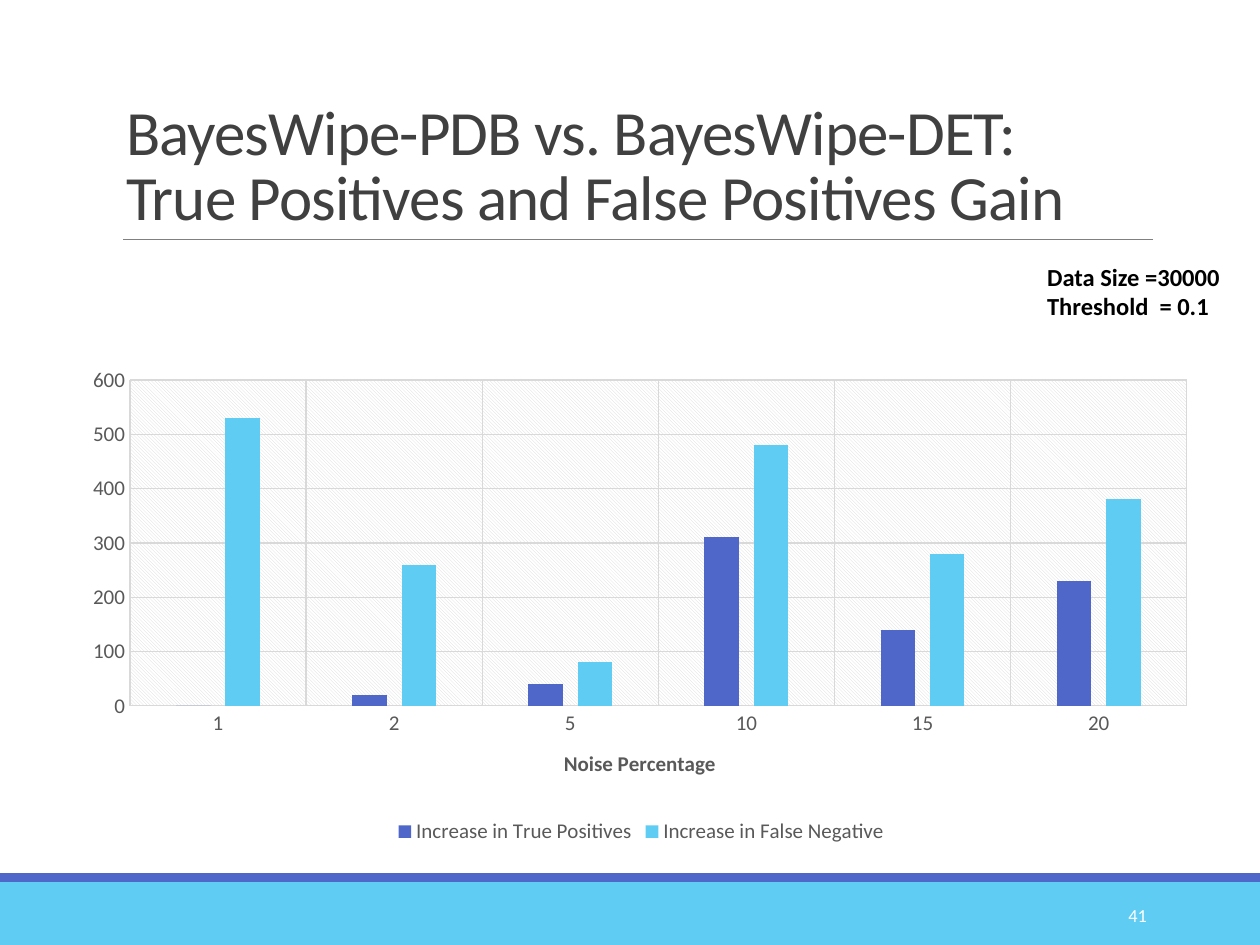
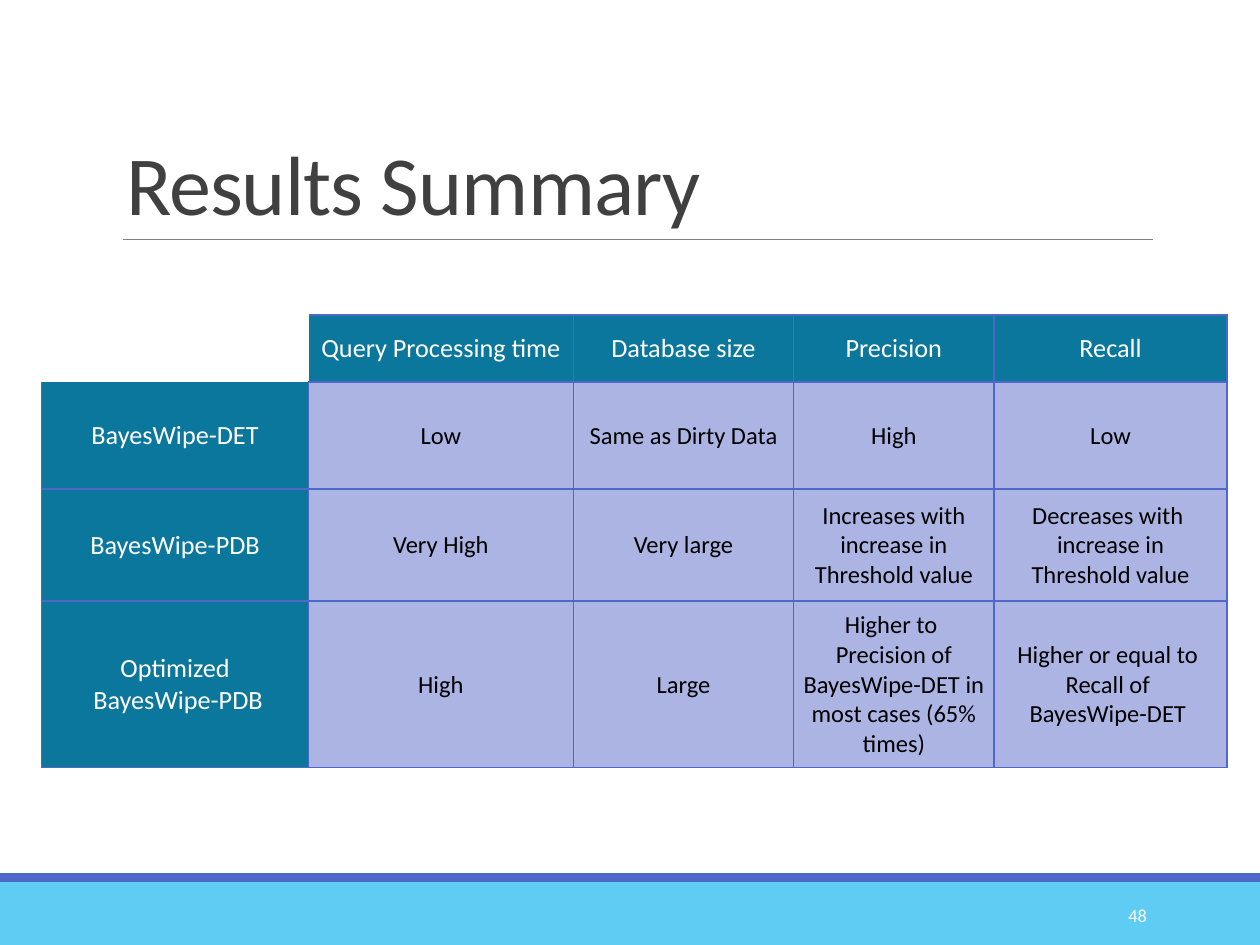
from lxml import etree
from pptx import Presentation
from pptx import util as u
from pptx.chart.data import CategoryChartData
from pptx.dml.color import RGBColor
from pptx.enum import chart as ch, shapes, text
from pptx.oxml import parse_xml
from pptx.oxml.ns import nsdecls, qn

Inches, Pt = u.Inches, u.Pt

FONT = "Calibri"
BLUE = RGBColor(0x4E, 0x67, 0xC8)
SKY = RGBColor(0x5E, 0xCC, 0xF3)
TEAL = RGBColor(0x0C, 0x77, 0x9D)
LAVENDER = RGBColor(0xAC, 0xB4, 0xE4)
WHITE = RGBColor(0xFF, 0xFF, 0xFF)
BLACK = RGBColor(0, 0, 0)
TITLE_GREY = RGBColor(0x40, 0x40, 0x40)
LABEL_GREY = RGBColor(0x59, 0x59, 0x59)
GRID_GREY = RGBColor(0xD9, 0xD9, 0xD9)
RULE_GREY = RGBColor(0x80, 0x80, 0x80)

LEFT, CENTER, RIGHT = text.PP_ALIGN.LEFT, text.PP_ALIGN.CENTER, text.PP_ALIGN.RIGHT
MIDDLE, BOTTOM = text.MSO_ANCHOR.MIDDLE, text.MSO_ANCHOR.BOTTOM
NO_STYLE = "{2D5ABB26-0587-4C30-8999-92F81FD0307C}"


def apply(obj, **values):
    for name, value in values.items():
        setattr(obj, name, value)


def box(*lengths):
    return [Inches(v) for v in lengths]


def style_font(font, size, color, bold=False):
    apply(font, name=FONT, size=Pt(size), bold=bold)
    font.color.rgb = color


def style_line(line, color, width):
    line.color.rgb = color
    line.width = Pt(width)


class Deck:
    def __init__(self):
        self.prs = Presentation()
        apply(self.prs, slide_width=Inches(10), slide_height=Inches(7.5))
        self.s = None

    def slide(self, title, size, number):
        self.s = self.prs.slides.add_slide(self.prs.slide_layouts[5])
        self.band(7, 0.5, SKY)
        self.band(6.93, 0.07, BLUE)
        self.rule(0.98, 9.15, 1.9)
        self.title(title, size)
        self.text(number, (8.12, 7.06, 1.08, 0.4), 10.5, WHITE,
                  align=RIGHT, vertical_anchor=MIDDLE)

    def band(self, top, height, color):
        sp = self.s.shapes.add_shape(shapes.MSO_SHAPE.RECTANGLE, *box(0, top, 10, height))
        sp.shadow.inherit = False
        sp.fill.solid()
        sp.fill.fore_color.rgb = color
        sp.line.fill.background()

    def rule(self, x1, x2, y):
        line = self.s.shapes.add_connector(shapes.MSO_CONNECTOR.STRAIGHT, *box(x1, y, x2, y))
        style_line(line.line, RULE_GREY, 0.5)
        etree.SubElement(line._element.spPr, qn("a:effectLst"))

    def fill_text(self, tf, content, size, color, bold=False, align=LEFT, spacing=None):
        for i, paragraph in enumerate(content.split("|")):
            p = tf.add_paragraph() if i else tf.paragraphs[0]
            apply(p, alignment=align, line_spacing=spacing)
            for j, part in enumerate(paragraph.split("\n")):
                if j:
                    p.add_line_break()
                r = p.add_run()
                r.text = part
                style_font(r.font, size, color, bold)

    def title(self, content, size):
        sp = self.s.shapes.title
        left, top, width, height = box(0.9, 0.31, 8.25, 1.59)
        apply(sp, left=left, top=top, width=width, height=height)
        tf = sp.text_frame
        apply(tf, auto_size=text.MSO_AUTO_SIZE.NONE, word_wrap=True, vertical_anchor=BOTTOM)
        self.fill_text(tf, content, size, TITLE_GREY, spacing=0.85)
        for r in tf.paragraphs[0].runs:
            r.font._element.set("spc", "-50")

    def text(self, content, place, size, color, bold=False, align=LEFT, **frame):
        tf = self.s.shapes.add_textbox(*box(*place)).text_frame
        apply(tf, word_wrap=True, **frame)
        self.fill_text(tf, content, size, color, bold, align)

    def chart(self, place, categories, series, axis_title):
        data = CategoryChartData()
        data.categories = categories
        for name, values, _ in series:
            data.add_series(name, values)
        chart = self.s.shapes.add_chart(
            ch.XL_CHART_TYPE.COLUMN_CLUSTERED, *box(*place), data).chart
        style_font(chart.font, 12, LABEL_GREY)
        apply(chart, has_title=False, has_legend=True)
        apply(chart.legend, position=ch.XL_LEGEND_POSITION.BOTTOM, include_in_layout=False)
        style_font(chart.legend.font, 12, LABEL_GREY)
        plot = chart.plots[0]
        apply(plot, gap_width=267, overlap=-43, vary_by_categories=False)
        for bars, (_, _, color) in zip(plot.series, series):
            bars.format.fill.solid()
            bars.format.fill.fore_color.rgb = color
        for axis in (chart.category_axis, chart.value_axis):
            apply(axis, has_major_gridlines=True,
                  major_tick_mark=ch.XL_TICK_MARK.NONE, minor_tick_mark=ch.XL_TICK_MARK.NONE)
            style_font(axis.tick_labels.font, 12, LABEL_GREY)
            style_line(axis.major_gridlines.format.line, GRID_GREY, 0.75)
        style_line(chart.category_axis.format.line, GRID_GREY, 0.75)
        chart.value_axis.format.line.fill.background()
        apply(chart.value_axis, minimum_scale=0, maximum_scale=600, major_unit=100)
        self.fill_text(chart.category_axis.axis_title.text_frame, axis_title,
                       12, LABEL_GREY, True, CENTER)
        self.plot_area(chart, x=0.05, y=0.05, w=0.93, h=0.66)

    def plot_area(self, chart, **fractions):
        area = chart._chartSpace.chart.plotArea
        for old in area.findall(qn("c:layout")):
            area.remove(old)
        sizes = "".join(f'<c:{k} val="{v}"/>' for k, v in fractions.items())
        area.insert(0, parse_xml(
            f'<c:layout {nsdecls("c")}><c:manualLayout><c:layoutTarget val="inner"/>'
            f'<c:xMode val="edge"/><c:yMode val="edge"/>{sizes}</c:manualLayout></c:layout>'))
        area.append(parse_xml(
            f'<c:spPr {nsdecls("c", "a")}><a:pattFill prst="ltDnDiag">'
            f'<a:fgClr><a:srgbClr val="{GRID_GREY}"/></a:fgClr>'
            f'<a:bgClr><a:srgbClr val="{WHITE}"/></a:bgClr></a:pattFill></c:spPr>'))

    def table(self, place, widths, heights, rows):
        table = self.s.shapes.add_table(len(rows), len(widths), *box(*place)).table
        apply(table, first_row=False, horz_banding=False)
        table._tbl.tblPr.find(qn("a:tableStyleId")).text = NO_STYLE
        for column, width in zip(table.columns, widths):
            column.width = Inches(width)
        for row, height in zip(table.rows, heights):
            row.height = Inches(height)
        for i, row in enumerate(rows):
            for j, content in enumerate(row):
                self.cell(table.cell(i, j), content, i, j)

    def cell(self, cell, content, i, j):
        corner, heading = i == j == 0, i == 0 or j == 0
        inset = Inches(0.01)
        apply(cell, vertical_anchor=MIDDLE, margin_left=inset, margin_right=inset,
              margin_top=inset, margin_bottom=0)
        cell.fill.solid()
        cell.fill.fore_color.rgb = WHITE if corner else TEAL if heading else LAVENDER
        if corner:
            return
        self.fill_text(cell.text_frame, content, 15 if heading else 14,
                       WHITE if heading else BLACK, align=CENTER)
        hidden = {(0, 1): "L", (1, 0): "T"}.get((i, j))
        sides = [side for side in "LRTB" if side != hidden]
        for k, side in enumerate(sides):
            cell._tc.tcPr.insert(k, parse_xml(
                f'<a:ln{side} {nsdecls("a")} w="12700"><a:solidFill>'
                f'<a:srgbClr val="{BLUE}"/></a:solidFill></a:ln{side}>'))


def main():
    deck = Deck()

    deck.slide("BayesWipe-PDB vs. BayesWipe-DET: \nTrue Positives and False Positives Gain", 36, "41")
    deck.chart((0.58, 2.82, 9.02, 3.92), ["1", "2", "5", "10", "15", "20"], [
        ("Increase in True Positives", (0, 20, 40, 310, 140, 230), BLUE),
        ("Increase in False Negative", (530, 260, 80, 480, 280, 380), SKY),
    ], "Noise Percentage")
    deck.text("Data Size =30000|Threshold  = 0.1", (8.24, 2.05, 1.67, 0.77), 14, BLACK, True,
              margin_left=Inches(0.07), margin_right=Inches(0.07),
              margin_top=Inches(0.03), margin_bottom=Inches(0.03),
              auto_size=text.MSO_AUTO_SIZE.SHAPE_TO_FIT_TEXT)

    deck.slide("Results Summary", 48, "48")
    deck.table((0.33, 2.5, 9.42, 3.58), (2.12, 2.1, 1.75, 1.59, 1.85), (0.53, 0.85, 0.89, 1.32), [
        ("", "Query Processing time", "Database size", "Precision", "Recall"),
        ("BayesWipe-DET", "Low", "Same as Dirty Data", "High", "Low"),
        ("BayesWipe-PDB", "Very High", "Very large",
         "Increases with increase in|Threshold value",
         "Decreases with |increase in|Threshold value"),
        ("Optimized\n BayesWipe-PDB", "High", "Large",
         "Higher to |Precision of BayesWipe-DET in most cases (65% times)",
         "Higher or equal to |Recall of |BayesWipe-DET "),
    ])

    deck.prs.save("out.pptx")


if __name__ == "__main__":
    main()
